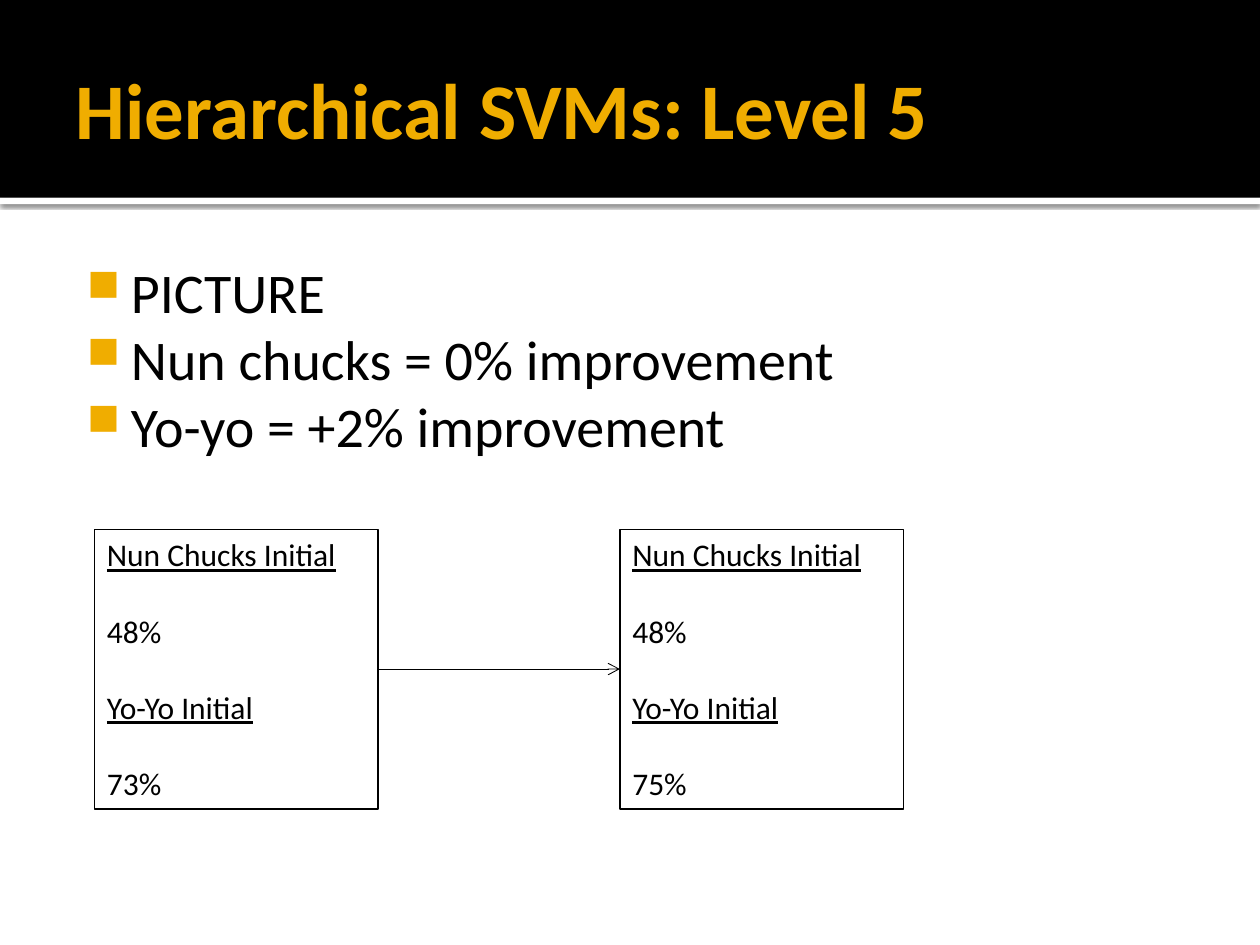
import pptx
import pptx.util
import pptx.dml.color
import pptx.enum.shapes
import pptx.enum.text
import pptx.oxml
import pptx.oxml.ns

Inches, Pt = pptx.util.Inches, pptx.util.Pt
MSO_SHAPE = pptx.enum.shapes.MSO_SHAPE
ANCHOR = pptx.enum.text.MSO_ANCHOR
NS = pptx.oxml.ns.nsdecls("a")
COLORS = {"black": "000000", "white": "FFFFFF", "gold": "F0AD00"}


def rgb(name):
    return pptx.dml.color.RGBColor.from_string(COLORS[name])


def add_run(p, text, size, color="black"):
    r = p.add_run()
    r.text = text
    r.font.name = "Calibri"
    r.font.size = Pt(size)
    r.font.color.rgb = rgb(color)
    return r


prs = pptx.Presentation()
prs.slide_width, prs.slide_height = Inches(10), Inches(7.5)
s = prs.slides.add_slide(prs.slide_layouts[5])
s.background.fill.solid()
s.background.fill.fore_color.rgb = rgb("white")

for top, height, color in [(1.57, 0.05, "white"), (0, 1.57, "black")]:
    sp = s.shapes.add_shape(MSO_SHAPE.RECTANGLE, 0, Inches(top), Inches(10), Inches(height))
    sp.shadow.inherit = False
    sp.fill.solid()
    sp.fill.fore_color.rgb = rgb(color)
    sp.line.fill.background()
    if color == "white":
        effects = sp._element.spPr.find(pptx.oxml.ns.qn("a:effectLst"))
        effects.append(pptx.oxml.parse_xml(
            f'<a:outerShdw {NS} blurRad="{Pt(2.5)}" dist="{Pt(0.8)}" dir="5400000" rotWithShape="0">'
            f'<a:srgbClr val="{COLORS["black"]}"><a:alpha val="60000"/></a:srgbClr></a:outerShdw>'))

title = s.shapes.title
s.shapes._spTree.append(title._element)
title.left, title.top, title.width, title.height = Inches(0.5), Inches(0.17), Inches(9), Inches(1.37)
tf = title.text_frame
tf.word_wrap = True
tf.vertical_anchor = ANCHOR.MIDDLE
tf.margin_left = Inches(0.1)
tf.margin_top = tf.margin_right = tf.margin_bottom = Inches(0.05)
p = tf.paragraphs[0]
p.alignment = pptx.enum.text.PP_ALIGN.LEFT
add_run(p, "Hierarchical SVMs: Level 5", 45, "gold").font.bold = True

body = s.shapes.add_textbox(Inches(0.5), Inches(1.94), Inches(9), Inches(5.06))
tf = body.text_frame
tf.word_wrap = True
tf.margin_left, tf.margin_top = Inches(0.06), Inches(0.1)
tf.margin_right, tf.margin_bottom = Inches(0.1), Inches(0.05)
bullets = ["PICTURE", "Nun chucks = 0% improvement", "Yo-yo = +2% improvement"]
for i, text in enumerate(bullets):
    p = tf.add_paragraph() if i else tf.paragraphs[0]
    pPr = p._p.get_or_add_pPr()
    pPr.set("marL", str(Inches(0.48)))
    pPr.set("indent", str(Inches(-0.35)))
    for xml in [f'<a:buClr {NS}><a:srgbClr val="{COLORS["gold"]}"/></a:buClr>',
                f'<a:buSzPct {NS} val="80000"/>',
                f'<a:buChar {NS} char="■"/>']:
        pPr.append(pptx.oxml.parse_xml(xml))
    add_run(p, text, 32)

boxes = []
for left, yoyo in [(0.75, "73%"), (4.92, "75%")]:
    sp = s.shapes.add_shape(MSO_SHAPE.RECTANGLE, Inches(left), Inches(4.2), Inches(2.25), Inches(2.22))
    sp.shadow.inherit = False
    sp.fill.background()
    sp.line.color.rgb = rgb("black")
    sp.line.width = Pt(0.75)
    tf = sp.text_frame
    tf.word_wrap = True
    tf.vertical_anchor = ANCHOR.TOP
    for i, text in enumerate(["Nun Chucks Initial", "48%", "Yo-Yo Initial", yoyo]):
        p = tf.add_paragraph() if i else tf.paragraphs[0]
        p.alignment = pptx.enum.text.PP_ALIGN.LEFT
        p.space_before = Pt(22 if i else 0)
        add_run(p, text, 18).font.underline = i % 2 == 0
    boxes.append(sp)

arrow = s.shapes.add_connector(pptx.enum.shapes.MSO_CONNECTOR.STRAIGHT, 0, 0, 0, 0)
arrow.begin_connect(boxes[0], 3)
arrow.end_connect(boxes[1], 1)
arrow.line.color.rgb = rgb("black")
arrow.line.width = Pt(0.5)
arrow.line._get_or_add_ln().append(pptx.oxml.parse_xml(f'<a:tailEnd {NS} type="arrow"/>'))
arrow._element.spPr.append(pptx.oxml.parse_xml(f'<a:effectLst {NS}/>'))

prs.save("out.pptx")
